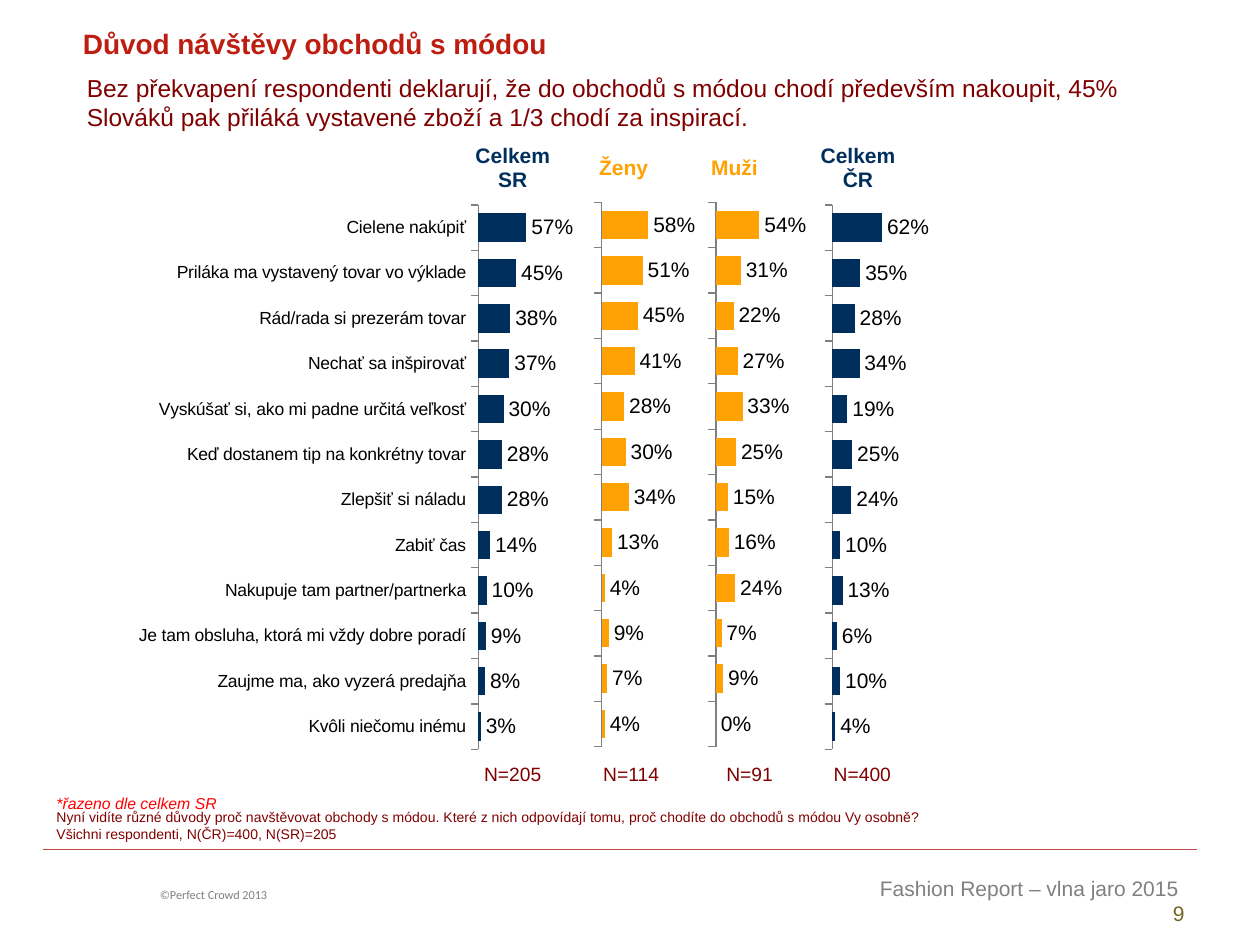
from lxml import etree
from pptx import Presentation
from pptx.chart.data import CategoryChartData
from pptx.dml.color import RGBColor
from pptx.enum.chart import XL_CHART_TYPE, XL_LABEL_POSITION, XL_TICK_LABEL_POSITION, XL_TICK_MARK
from pptx.enum.shapes import MSO_CONNECTOR
from pptx.enum.text import MSO_ANCHOR, MSO_AUTO_SIZE, PP_ALIGN
from pptx.oxml import parse_xml
from pptx.oxml.ns import qn
from pptx.util import Inches, Pt

BAR = XL_CHART_TYPE.BAR_CLUSTERED
OUTSIDE_END = XL_LABEL_POSITION.OUTSIDE_END
NO_LABELS = XL_TICK_LABEL_POSITION.NONE
LOW_LABELS = XL_TICK_LABEL_POSITION.LOW
TICK_OUT, TICK_NONE = XL_TICK_MARK.OUTSIDE, XL_TICK_MARK.NONE
STRAIGHT = MSO_CONNECTOR.STRAIGHT
MIDDLE = MSO_ANCHOR.MIDDLE
FIT_SHAPE = MSO_AUTO_SIZE.SHAPE_TO_FIT_TEXT
LEFT, CENTER, RIGHT = PP_ALIGN.LEFT, PP_ALIGN.CENTER, PP_ALIGN.RIGHT

NAVY, ORANGE, MAROON, GREY = "002F5E", "FFA102", "800000", "808080"
CHART_NS = "http://schemas.openxmlformats.org/drawingml/2006/chart"

REASONS = [
    "Kvôli niečomu inému", "Zaujme ma, ako vyzerá predajňa",
    "Je tam obsluha, ktorá mi vždy dobre poradí", "Nakupuje tam partner/partnerka",
    "Zabiť čas", "Zlepšiť si náladu", "Keď dostanem tip na konkrétny tovar",
    "Vyskúšať si, ako mi padne určitá veľkosť", "Nechať sa inšpirovať",
    "Rád/rada si prezerám tovar", "Priláka ma vystavený tovar vo výklade",
    "Cielene nakúpiť",
]
NUMBERS = [str(number) for number in range(1, len(REASONS) + 1)]

# Box, categories, plot left and width as shares of the box, colour, values
CHARTS = [
    ((5.06, 1.3, 2.48, 5.03), NUMBERS, 0.623, 0.258, NAVY,
     [4, 10, 6, 13, 10, 24, 25, 19, 34, 28, 35, 62]),
    ((4.15, 1.28, 2.48, 5.03), NUMBERS, 0.618, 0.258, ORANGE,
     [0, 9, 7, 24, 16, 15, 25, 33, 27, 22, 31, 54]),
    ((3.23, 1.28, 2.48, 5.03), NUMBERS, 0.623, 0.258, ORANGE,
     [4, 7, 9, 4, 13, 34, 30, 28, 41, 45, 51, 58]),
    ((-0.22, 1.3, 4.99, 5.03), REASONS, 0.805, 0.134, NAVY,
     [3, 8, 9, 10, 14, 28, 28, 30, 37, 38, 45, 57]),
]


def rgb(color):
    return RGBColor.from_string(color)


def inches(box):
    return [Inches(length) for length in box]


def set_font(font, size, color, name="Arial", bold=False, italic=False):
    font.name, font.size, font.bold, font.italic = name, Pt(size), bold, italic
    font.color.rgb = rgb(color)


def add_text(slide, box, text, size, color, align=LEFT, wrap=True, grow=True, **style):
    frame = slide.shapes.add_textbox(*inches(box)).text_frame
    frame.word_wrap = wrap
    if grow:
        frame.auto_size = FIT_SHAPE
    frame.text = text
    for paragraph in frame.paragraphs:
        paragraph.alignment = align
        set_font(paragraph.font, size, color, **style)
    return frame


def set_plot_layout(chart, left, width, top=0.065, height=0.859):
    """Fix the inner plot area at shares of the chart's size."""
    plot_area = chart.plots[0]._element.getparent()
    for layout in plot_area.findall(qn("c:layout")):
        plot_area.remove(layout)
    layout = etree.Element(qn("c:layout"))
    manual = etree.SubElement(layout, qn("c:manualLayout"))
    settings = [("layoutTarget", "inner"), ("xMode", "edge"), ("yMode", "edge"),
                ("x", left), ("y", top), ("w", width), ("h", height)]
    for tag, value in settings:
        etree.SubElement(manual, f"{{{CHART_NS}}}{tag}").set("val", str(value))
    plot_area.insert(0, layout)


def add_bar_chart(slide, box, categories, plot_left, plot_width, color, values):
    data = CategoryChartData()
    data.categories = categories
    data.add_series("Series 1", values)
    chart = slide.shapes.add_chart(BAR, *inches(box), data).chart
    chart.has_legend = chart.has_title = False
    set_font(chart.font, 12, "000000")
    set_plot_layout(chart, plot_left, plot_width)

    named = categories is REASONS
    axis = chart.category_axis
    axis.major_tick_mark, axis.minor_tick_mark = TICK_OUT, TICK_NONE
    axis.tick_label_position = LOW_LABELS if named else NO_LABELS
    axis.format.line.color.rgb = rgb(GREY)
    set_font(axis.tick_labels.font, 10 if named else 11, "000000")

    scale = chart.value_axis
    scale.minimum_scale, scale.maximum_scale = 0, 100
    scale.has_major_gridlines = scale.visible = False

    plot = chart.plots[0]
    plot.gap_width, plot.vary_by_categories = 60, False
    fill = plot.series[0].format.fill
    fill.solid()
    fill.fore_color.rgb = rgb(color)
    plot.has_data_labels = True
    labels = plot.data_labels
    labels.show_value, labels.position = True, OUTSIDE_END
    labels.number_format, labels.number_format_is_linked = '#,##0"%"', False
    set_font(labels.font, 12, "000000")


def add_label_row(slide, box, widths, labels, size, bold=False):
    """Add a one-row table without fill from (text, colour) pairs."""
    table = slide.shapes.add_table(1, len(labels), *inches(box)).table
    table.first_row = table.horz_banding = False
    for column, width, cell, (text, color) in zip(
            table.columns, widths, table.rows[0].cells, labels):
        column.width = Inches(width)
        cell.fill.background()
        cell.vertical_anchor = MIDDLE
        cell.margin_left = cell.margin_right = cell.margin_top = Inches(0.01)
        cell.margin_bottom = 0
        cell.text = text
        for paragraph in cell.text_frame.paragraphs:
            paragraph.alignment = CENTER
            set_font(paragraph.font, size, color, bold=bold)


def add_footer(slide):
    rule = slide.shapes.add_connector(STRAIGHT, *inches((0.34, 6.74, 9.5, 6.74)))
    rule.line.color.rgb = rgb("BF4C48")
    rule.line.width = Pt(0.75)
    rule._element.spPr.append(parse_xml(
        '<a:effectLst xmlns:a="http://schemas.openxmlformats.org/drawingml/2006/main"/>'))
    add_text(slide, (1.17, 6.99, 2.91, 0.22), "©Perfect Crowd 2013", 7, GREY, name="Calibri")
    frame = add_text(slide, (5.79, 6.9, 3.71, 0.5),
                     "Fashion Report – vlna jaro 2015 \v9", 12, GREY, align=RIGHT)
    frame.paragraphs[0].runs[-1].font.color.rgb = rgb("756522")


def add_headings(slide):
    add_text(slide, (0.56, 0.16, 7.51, 0.37), "Důvod návštěvy obchodů s módou",
             16, "BE1E11", bold=True)
    add_text(slide, (0.59, 0.53, 8.98, 0.81),
             "Bez překvapení respondenti deklarují, že do obchodů s módou chodí především "
             "nakoupit, 45% Slováků pak přiláká vystavené zboží a 1/3 chodí za inspirací.",
             14, MAROON, grow=False)


def add_notes_on_data(slide):
    add_text(slide, (0.35, 6.37, 9.06, 0.37),
             "Nyní vidíte různé důvody proč navštěvovat obchody s módou. Které z nich "
             "odpovídají tomu, proč chodíte do obchodů s módou Vy osobně?\n"
             "Všichni respondenti, N(ČR)=400, N(SR)=205", 8, MAROON)
    add_text(slide, (0.35, 6.25, 1.53, 0.25), "*řazeno dle celkem SR", 9, "FF0000",
             wrap=False, italic=True)


def main():
    presentation = Presentation()
    presentation.slide_width, presentation.slide_height = Inches(10), Inches(7.5)
    slide = presentation.slides.add_slide(presentation.slide_layouts[6])
    add_footer(slide)
    add_headings(slide)
    for chart in CHARTS:
        add_bar_chart(slide, *chart)
    add_label_row(slide, (3.63, 1.11, 3.72, 0.44), [0.88] * 3 + [1.08],
                  [("Celkem\nSR", NAVY), ("Ženy", ORANGE), ("Muži", ORANGE),
                   ("Celkem\nČR", NAVY)], 12, bold=True)
    add_label_row(slide, (3.6, 6.04, 3.67, 0.21), [0.94] * 3 + [0.85],
                  [(f"N={size}", MAROON) for size in (205, 114, 91, 400)], 11)
    add_notes_on_data(slide)
    presentation.save("out.pptx")


if __name__ == "__main__":
    main()
